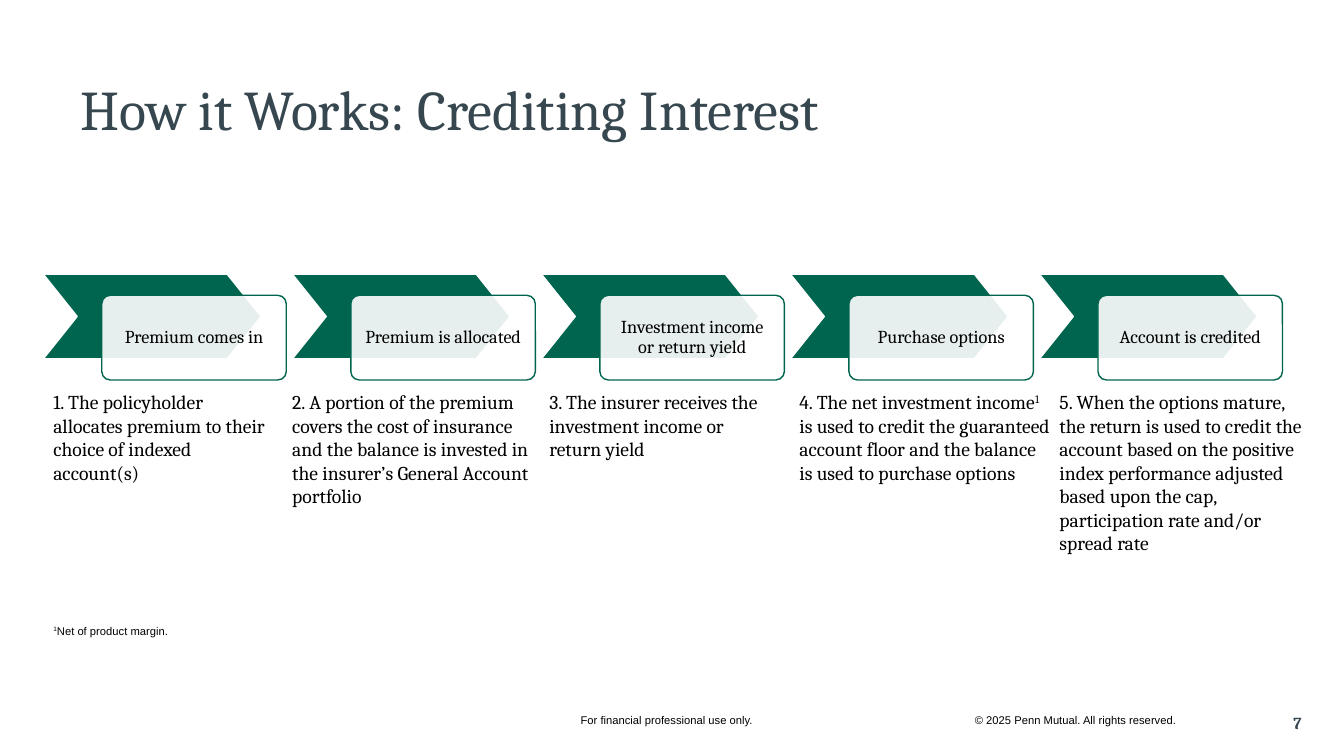
from lxml import etree
from pptx import Presentation
from pptx.dml.color import RGBColor
from pptx.enum.shapes import MSO_SHAPE
from pptx.enum.text import MSO_ANCHOR, MSO_AUTO_SIZE, PP_ALIGN
from pptx.oxml.ns import qn
from pptx.util import Pt

PX = 9144  # 100 px to the inch
CHEVRON, ROUNDED = MSO_SHAPE.CHEVRON, MSO_SHAPE.ROUNDED_RECTANGLE
TOP, MIDDLE = MSO_ANCHOR.TOP, MSO_ANCHOR.MIDDLE
COLORS = {"green": "00654E", "slate": "37474F", "white": "FFFFFF", "black": "000000"}
RGB = {name: RGBColor.from_string(value) for name, value in COLORS.items()}

TITLE = {"name": "Cambria", "size": Pt(40), "bold": False}
LABEL = {"name": "Cambria", "size": Pt(13)}
BODY = {"name": "Cambria", "size": Pt(14)}
SMALL = {"name": "Arial", "size": Pt(8)}
NUMBER = {"name": "Cambria", "size": Pt(12), "bold": True}


def write(s, text, font, color="black", anchor=TOP):
    """Fill a shape with one paragraph; text between ^ marks is superscript."""
    tf = s.text_frame
    tf.word_wrap = True
    tf.auto_size = MSO_AUTO_SIZE.NONE
    tf.vertical_anchor = anchor
    p = tf.paragraphs[0]
    for i, part in enumerate(text.split("^")):
        if not part:
            continue
        r = p.add_run()
        r.text = part
        for key, value in font.items():
            setattr(r.font, key, value)
        r.font.color.rgb = RGB[color]
        if i % 2:
            r.font._element.set("baseline", "30000")
    return p


def add_step_shape(kind, box, adjust, fill, line):
    s = shapes.add_shape(kind, *[v * PX for v in box])
    s.shadow.inherit = False
    s.adjustments[0] = adjust
    s.fill.solid()
    s.fill.fore_color.rgb = RGB[fill]
    s.line.color.rgb = RGB[line]
    s.line.width = Pt(1)
    return s


prs = Presentation()
prs.slide_width, prs.slide_height = 1333 * PX, 750 * PX
slide = prs.slides.add_slide(prs.slide_layouts[5])
shapes = slide.shapes

# Title
title = shapes.title
title.left, title.top, title.width, title.height = [v * PX for v in (70, 76, 1192, 71)]
p = write(title, "How it Works: Crediting Interest", TITLE, "slate")
p.alignment = PP_ALIGN.LEFT
p.line_spacing = 0.9

# Process steps: chevron with a translucent label card
labels = ["Premium comes in", "Premium is allocated", "Investment income or return yield",
          "Purchase options", "Account is credited"]
for i, label in enumerate(labels):
    left = 43 + 247 * i
    add_step_shape(CHEVRON, (left, 272, 216, 84), 0.4, "green", "white")
    card = add_step_shape(ROUNDED, (left + 58, 293, 183, 84), 0.1, "white", "green")
    color = card._element.spPr.find(qn("a:solidFill"))[0]
    etree.SubElement(color, qn("a:alpha"), val="90000")
    p = write(card, label, LABEL, anchor=MIDDLE)
    p.alignment = PP_ALIGN.CENTER
    p.line_spacing = 0.9

# Step descriptions, footnote, footer and page number
texts = [
    ((43, 382, 238, 104), BODY, "black", "1. The policyholder allocates premium to their choice of "
     "indexed account(s)"),
    ((280, 382, 265, 128), BODY, "black", "2. A portion of the premium covers the cost of insurance "
     "and the balance is invested in the insurer’s General Account portfolio"),
    ((535, 382, 244, 81), BODY, "black", "3. The insurer receives the investment income or return yield"),
    ((783, 382, 270, 128), BODY, "black", "4. The net investment income^1^ is used to credit the "
     "guaranteed account floor and the balance is used to purchase options"),
    ((1041, 382, 263, 175), BODY, "black", "5. When the options mature, the return is used to credit "
     "the account based on the positive index performance adjusted based upon the cap, "
     "participation rate and/or spread rate"),
    ((43, 614, 531, 24), SMALL, "black", "^1^Net of product margin."),
    ((566, 703, 200, 24), SMALL, "black", "For financial professional use only."),
    ((957, 703, 293, 24), SMALL, "black", "© 2025 Penn Mutual. All rights reserved."),
    ((1273, 702, 56, 30), NUMBER, "slate", "7"),
]
for box, font, color, text in texts:
    write(shapes.add_textbox(*[v * PX for v in box]), text, font, color)

prs.save("out.pptx")
